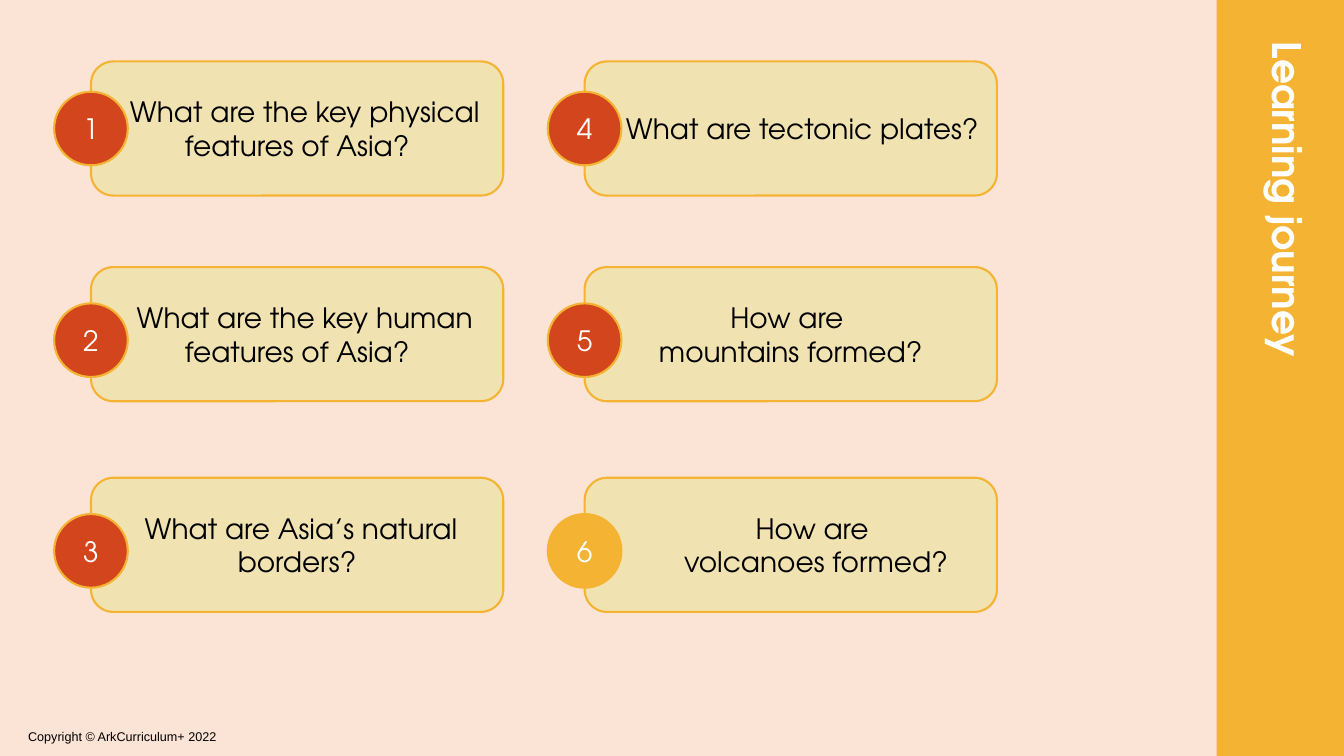
from pptx import Presentation
from pptx.dml.color import RGBColor
from pptx.enum.shapes import MSO_SHAPE
from pptx.enum.text import MSO_ANCHOR, MSO_AUTO_SIZE, PP_ALIGN
from pptx.util import Pt

STEPS = [
    ("What are the key physical features of Asia?", 0, 11),
    ("What are the key human features of Asia?", 0, 11),
    ("What are Asia’s natural borders?", 0, 5.5),
    ("What are tectonic plates?", 0, 16.5),
    ("How are \vmountains formed?", 0, 0),
    ("How are \vvolcanoes formed?", 36, 0),
]
TITLE = "Learning journey"
NOTICE = "Copyright © ArkCurriculum+ 2022"
GOLD, RED, SAND, PINK = "F5B333", "D2451D", "F1E3B1", "FBE3D6"
BLACK, WHITE = "000000", "FFFFFF"
FACE = "TeX Gyre Adventor"
COLS = (65, 417.6)
TOPS = (43.9, 190.8, 341.3)
DOTS = (65.5, 216.7, 367.2)
WIDE, HIGH, DOT = 294.5, 95.8, 52.6


def rgb(code):
    return RGBColor.from_string(code)


def apply(item, form):
    for name, value in form.items():
        setattr(item, name, value)


def write(shape, text, size, color, face=FACE, bold=False, frame={}, para={}):
    apply(shape.text_frame, {"word_wrap": True, **frame})
    line = shape.text_frame.paragraphs[0]
    line.text = text
    apply(line, para)
    for run in line.runs:
        apply(run.font, {"size": Pt(size), "name": face, "bold": bold})
        run.font.color.rgb = rgb(color)
    return line


def draw(kind, left, top, width, height, fill, edge=None):
    shape = slide.shapes.add_shape(kind, Pt(left), Pt(top), Pt(width), Pt(height))
    shape.shadow.inherit = False
    shape.fill.solid()
    shape.fill.fore_color.rgb = rgb(fill)
    if edge:
        shape.line.color.rgb = rgb(edge)
        shape.line.width = Pt(1.5)
    else:
        shape.line.fill.background()
    return shape


deck = Presentation()
apply(deck, {"slide_width": Pt(960), "slide_height": Pt(540)})
slide = deck.slides.add_slide(deck.slide_layouts[5])
slide.background.fill.solid()
slide.background.fill.fore_color.rgb = rgb(PINK)

MID = {"vertical_anchor": MSO_ANCHOR.MIDDLE}
CENTER = {"alignment": PP_ALIGN.CENTER}

for i, (text, margin, indent) in enumerate(STEPS):
    col, row = divmod(i, len(TOPS))
    left = COLS[col]
    card = draw(MSO_SHAPE.ROUNDED_RECTANGLE, left, TOPS[row], WIDE, HIGH, SAND, GOLD)
    line = write(card, text, 20, BLACK, frame=MID, para=CENTER)
    props = line._p.get_or_add_pPr()
    props.set("marL", str(Pt(margin)))
    props.set("indent", str(Pt(indent)))
    fill = GOLD if i == len(STEPS) - 1 else RED
    dot = draw(MSO_SHAPE.OVAL, left - DOT / 2, DOTS[row], DOT, DOT, fill, GOLD)
    write(dot, str(i + 1), 20, WHITE, frame=MID, para=CENTER)

draw(MSO_SHAPE.RECTANGLE, 869, 0, 91, 540, GOLD)

title = slide.shapes.title
apply(title, {"left": Pt(737.3), "top": Pt(178.6), "width": Pt(355),
              "height": Pt(43.2), "rotation": 90})
write(title, TITLE, 28, WHITE, bold=True,
      frame={"vertical_anchor": MSO_ANCHOR.TOP, "auto_size": MSO_AUTO_SIZE.NONE},
      para={"alignment": PP_ALIGN.LEFT, "line_spacing": 0.9, "space_before": Pt(0)})
title.element.getparent().append(title.element)

note = slide.shapes.add_textbox(Pt(13), Pt(517), Pt(288), Pt(18))
write(note, NOTICE, 9, BLACK, face="Arial")

deck.save("out.pptx")
